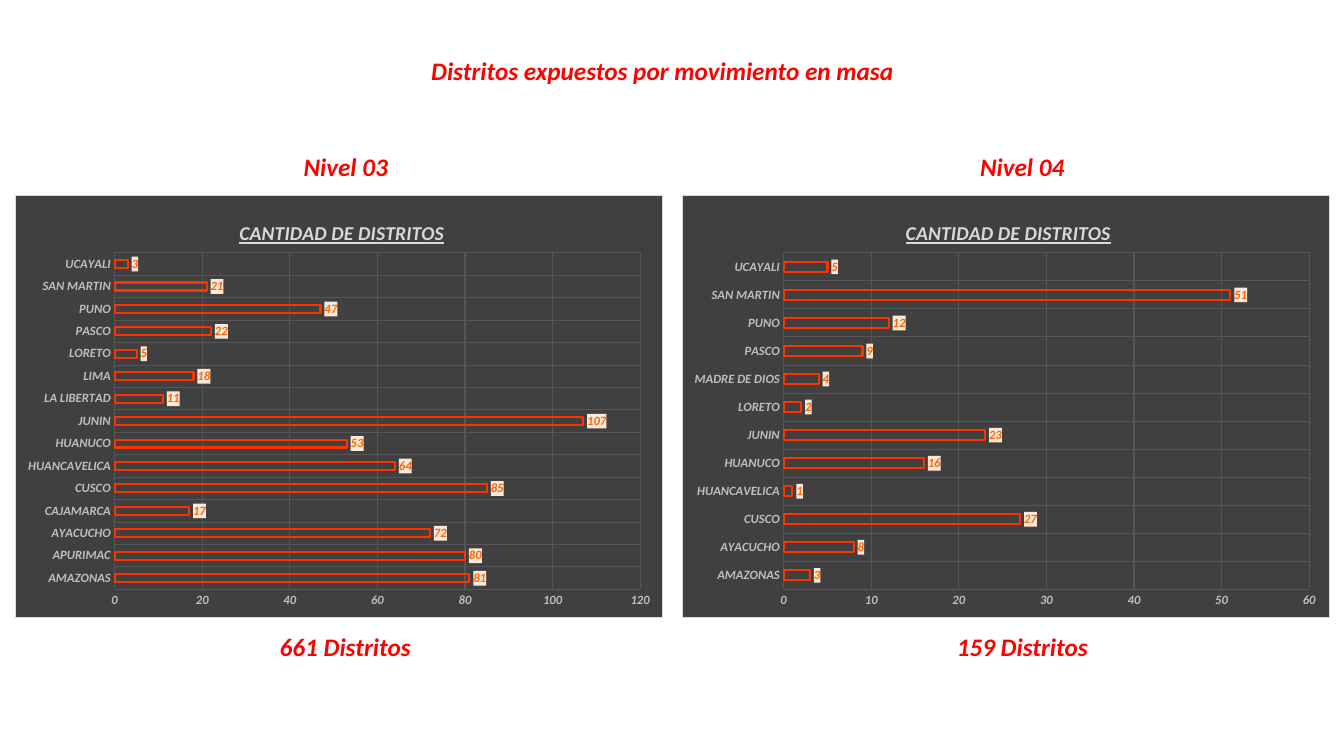
"""Build the slide of districts exposed to mass movement, with one chart per level."""
from dataclasses import dataclass

from lxml import etree
from pptx import Presentation
from pptx.chart.axis import _BaseAxis as Axis
from pptx.chart.chart import Chart
from pptx.chart.data import CategoryChartData
from pptx.dml.color import RGBColor
from pptx.enum.chart import XL_CHART_TYPE, XL_LABEL_POSITION, XL_TICK_MARK
from pptx.enum.text import MSO_AUTO_SIZE, PP_ALIGN
from pptx.oxml import parse_xml
from pptx.slide import Slide
from pptx.text.text import Font
from pptx.util import Inches, Pt

BAR = XL_CHART_TYPE.BAR_CLUSTERED
OUTER = XL_LABEL_POSITION.OUTSIDE_END
NO_TICK = XL_TICK_MARK.NONE
CENTER = PP_ALIGN.CENTER
GROW = MSO_AUTO_SIZE.SHAPE_TO_FIT_TEXT
FACE = "Calibri"
COLORS = {
    "text": "FF0000", "panel": "404040", "edge": "D9D9D9", "grid": "565656",
    "axis": "BFBFBF", "bar": "FF3300", "value": "FF6600", "label": "FDE9DB",
}
C = "http://schemas.openxmlformats.org/drawingml/2006/chart"
A = "http://schemas.openxmlformats.org/drawingml/2006/main"


@dataclass
class Caption:
    text: str
    left: float
    top: float
    width: float
    wrap: bool = True


@dataclass
class Panel:
    left: float
    plot: tuple[float, float, float, float]
    top: int
    step: int
    counts: dict[str, int]


CAPTIONS = [
    Caption("Distritos expuestos por movimiento en masa", 4.15, 0.5, 4.84, False),
    Caption("Nivel 03", 2.9, 1.45, 1.06),
    Caption("661 Distritos", 2.59, 6.21, 1.67),
    Caption("Nivel 04", 9.61, 1.45, 1.06),
    Caption("159 Distritos", 9.38, 6.21, 1.52),
]
PANELS = [
    Panel(0.15, (0.153, 0.137, 0.812, 0.797), 120, 20, {
        "AMAZONAS": 81, "APURIMAC": 80, "AYACUCHO": 72, "CAJAMARCA": 17,
        "CUSCO": 85, "HUANCAVELICA": 64, "HUANUCO": 53, "JUNIN": 107,
        "LA LIBERTAD": 11, "LIMA": 18, "LORETO": 5, "PASCO": 22,
        "PUNO": 47, "SAN MARTIN": 21, "UCAYALI": 3,
    }),
    Panel(6.76, (0.157, 0.137, 0.812, 0.797), 60, 10, {
        "AMAZONAS": 3, "AYACUCHO": 8, "CUSCO": 27, "HUANCAVELICA": 1,
        "HUANUCO": 16, "JUNIN": 23, "LORETO": 2, "MADRE DE DIOS": 4,
        "PASCO": 9, "PUNO": 12, "SAN MARTIN": 51, "UCAYALI": 5,
    }),
]


def paint(font: Font, size: float, color: str) -> None:
    font.name, font.size = FACE, Pt(size)
    font.bold = font.italic = True
    font.color.rgb = RGBColor.from_string(COLORS[color])


def write(slide: Slide, cap: Caption) -> None:
    box = slide.shapes.add_textbox(
        Inches(cap.left), Inches(cap.top), Inches(cap.width), Inches(0.4))
    frame = box.text_frame
    frame.word_wrap, frame.auto_size = cap.wrap, GROW
    para = frame.paragraphs[0]
    para.alignment = CENTER
    run = para.add_run()
    run.text = cap.text
    paint(run.font, 18, "text")


def backdrop(node: etree._Element, fill: str, line: str = "") -> None:
    edge = f'<a:solidFill><a:srgbClr val="{COLORS[line]}"/></a:solidFill>' if line else "<a:noFill/>"
    node.find(f"{{{C}}}txPr").addprevious(parse_xml(
        f'<c:spPr xmlns:c="{C}" xmlns:a="{A}"><a:solidFill>'
        f'<a:srgbClr val="{COLORS[fill]}"/></a:solidFill>'
        f'<a:ln w="9525">{edge}</a:ln></c:spPr>'))


def place(node: etree._Element, index: int, spots: dict[str, float], inner: bool = False) -> None:
    for old in node.findall(f"{{{C}}}layout"):
        node.remove(old)
    target = '<c:layoutTarget val="inner"/>' if inner else ""
    modes = "".join(f'<c:{key}Mode val="edge"/>' for key in "xy")
    sizes = "".join(f'<c:{key} val="{val}"/>' for key, val in spots.items())
    node.insert(index, parse_xml(
        f'<c:layout xmlns:c="{C}"><c:manualLayout>{target}{modes}{sizes}'
        "</c:manualLayout></c:layout>"))


def trim(axis: Axis) -> None:
    axis.major_tick_mark = axis.minor_tick_mark = NO_TICK
    axis.has_major_gridlines = True
    grid = axis.major_gridlines.format.line
    grid.width = Pt(0.75)
    grid.color.rgb = RGBColor.from_string(COLORS["grid"])
    axis.format.line.fill.background()
    paint(axis.tick_labels.font, 9, "axis")


def head(chart: Chart) -> None:
    chart.has_title = True
    title = chart.chart_title
    title.include_in_layout = False
    run = title.text_frame.paragraphs[0].add_run()
    run.text = "CANTIDAD DE DISTRITOS"
    paint(run.font, 14, "edge")
    run.font.underline = True
    place(title._element, 1, {"x": 0.34, "y": 0.05})


def draw(slide: Slide, panel: Panel) -> None:
    data = CategoryChartData(number_format="#,##0")
    data.categories = list(panel.counts)
    data.add_series("Series 1", list(panel.counts.values()))
    chart = slide.shapes.add_chart(
        BAR, Inches(panel.left), Inches(1.93), Inches(6.43), Inches(4.2), data).chart
    chart.has_legend = False
    chart.font.name, chart.font.size = FACE, Pt(10)
    head(chart)
    space = chart._chartSpace
    backdrop(space, "panel", "edge")
    place(space.find(f".//{{{C}}}plotArea"), 0, dict(zip("xywh", panel.plot)), True)
    trim(chart.category_axis)
    scale = chart.value_axis
    trim(scale)
    scale.minimum_scale, scale.maximum_scale = 0, panel.top
    scale.major_unit = panel.step
    plot = chart.plots[0]
    plot.gap_width, plot.overlap, plot.vary_by_categories = 182, -50, False
    bars = plot.series[0]
    bars.format.fill.background()
    bars.format.line.width = Pt(1.5)
    bars.format.line.color.rgb = RGBColor.from_string(COLORS["bar"])
    labels = bars.data_labels
    labels.show_value, labels.position = True, OUTER
    labels.number_format, labels.number_format_is_linked = "#,##0", False
    paint(labels.font, 9, "value")
    backdrop(labels._element, "label")


def main() -> None:
    deck = Presentation()
    deck.slide_width, deck.slide_height = Inches(13.33), Inches(7.5)
    slide = deck.slides.add_slide(deck.slide_layouts[6])
    for cap in CAPTIONS:
        write(slide, cap)
    for panel in PANELS:
        draw(slide, panel)
    deck.save("out.pptx")


if __name__ == "__main__":
    main()
